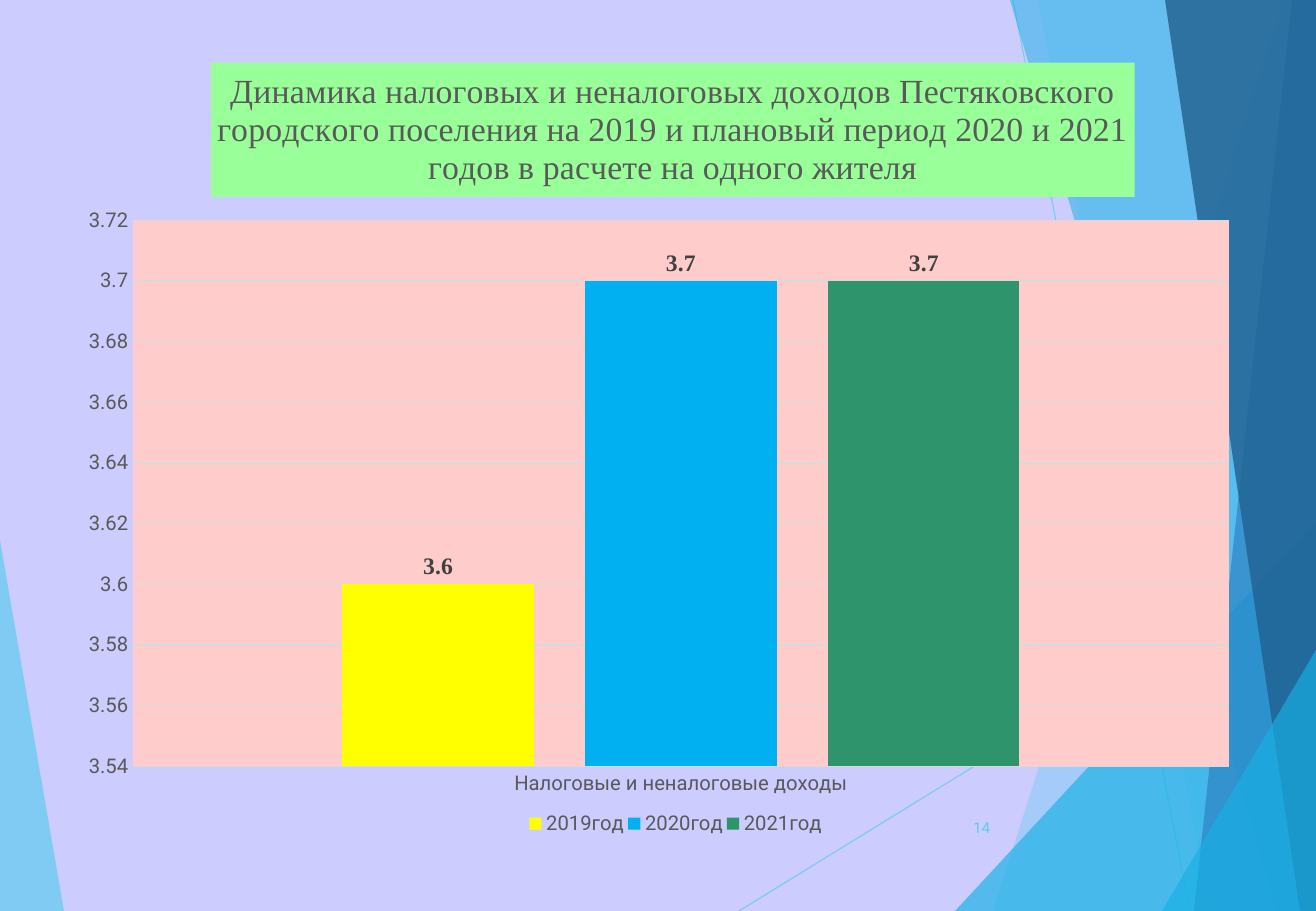
"""Builds the slide on income per resident, a column chart for 2019 to 2021."""
from lxml import etree
from pptx import Presentation
from pptx.chart.data import CategoryChartData
from pptx.dml.color import RGBColor
from pptx.enum.chart import XL_CHART_TYPE as ChartType, XL_LABEL_POSITION as LabelPos
from pptx.enum.chart import XL_LEGEND_POSITION as LegendPos, XL_TICK_MARK as Tick
from pptx.enum.shapes import MSO_CONNECTOR as Connector
from pptx.enum.text import MSO_ANCHOR as Anchor, PP_ALIGN as Align
from pptx.oxml.ns import qn
from pptx.util import Pt

PX = 914400 / 121.5
WIDTH, HEIGHT = 1316, 911
SANS, SERIF = "Roboto", "Times New Roman"
color = RGBColor.from_string


def set_alpha(shape, percent):
    for tint in shape.element.xpath(".//a:srgbClr"):
        etree.SubElement(tint, qn("a:alpha")).set("val", str(percent * 1000))


def place(part, index, **settings):
    for old in part.findall(qn("c:layout")):
        part.remove(old)
    layout = etree.Element(qn("c:layout"))
    manual = etree.SubElement(layout, qn("c:manualLayout"))
    for key, value in settings.items():
        etree.SubElement(manual, qn(f"c:{key}")).set("val", str(value))
    part.insert(index, layout)


deck = Presentation()
deck.slide_width, deck.slide_height = round(WIDTH * PX), round(HEIGHT * PX)
slide = deck.slides.add_slide(deck.slide_layouts[6])
slide.background.fill.solid()
slide.background.fill.fore_color.rgb = color("CCCCFF")

right_edge = [(WIDTH, HEIGHT), (WIDTH, 0)]
left_facet = ([(0, 540), (64, HEIGHT), (0, HEIGHT)], "5FCBEF", 70)
right_facets = [
    ([(1283, 0), (993, HEIGHT), *right_edge], "5FCBEF", 36),
    ([(1038, 0), (1210, HEIGHT), *right_edge], "5FCBEF", 20),
    ([(955, HEIGHT), (WIDTH, 521), (WIDTH, HEIGHT)], "17B0E4", 66),
    ([(1010, 0), (1277, HEIGHT), *right_edge], "17B0E4", 50),
    ([(1292, 0), (1194, HEIGHT), *right_edge], "2E83C3", 70),
    ([(1165, 0), (1300, HEIGHT), *right_edge], "226292", 82),
    ([(1162, HEIGHT), (WIDTH, 650), (WIDTH, HEIGHT)], "17B0E4", 66),
]

for ends in [(739, HEIGHT, WIDTH, 556), (1013, 0, 1190, HEIGHT)]:
    ray = slide.shapes.add_connector(Connector.STRAIGHT, *[round(n * PX) for n in ends])
    ray.line.color.rgb = color("5FCBEF")
    ray.line.width = Pt(0.75)
    set_alpha(ray, 70)
    etree.SubElement(ray.element.spPr, qn("a:effectLst"))

for corners, tint, opacity in [left_facet, *right_facets]:
    outline = slide.shapes.build_freeform(*corners[0], scale=PX)
    outline.add_line_segments(corners[1:], close=True)
    facet = outline.convert_to_shape()
    facet.shadow.inherit = False
    facet.fill.solid()
    facet.fill.fore_color.rgb = color(tint)
    facet.line.fill.background()
    set_alpha(facet, opacity)

years = [("2019год", 3.6, "FFFF00"), ("2020год", 3.7, "00B0F0"), ("2021год", 3.7, "2E946B")]
income = CategoryChartData(number_format="General")
income.categories = ["Налоговые и неналоговые доходы"]
for year, amount, _ in years:
    income.add_series(year, [amount])
frame = [round(n * PX) for n in (44, 56, 1203, 830)]
chart = slide.shapes.add_chart(ChartType.COLUMN_CLUSTERED, *frame, income).chart
chart.font.name, chart.font.size = SANS, Pt(10)
chart.font.color.rgb = color("000000")

chart.has_title = True
heading = chart.chart_title
heading_text = heading.text_frame.paragraphs[0].add_run()
heading_text.text = (
    "Динамика налоговых и неналоговых доходов Пестяковского городского поселения "
    "на 2019 и плановый период 2020 и 2021 годов в расчете на одного жителя"
)
heading_text.font.name, heading_text.font.size = SERIF, Pt(20)
heading_text.font.bold = False
heading_text.font.color.rgb = color("595959")
heading.format.fill.solid()
heading.format.fill.fore_color.rgb = color("99FF99")

chart.has_legend = True
chart.legend.position = LegendPos.BOTTOM
chart.legend.include_in_layout = False

amounts, groups = chart.value_axis, chart.category_axis
amounts.minimum_scale, amounts.maximum_scale, amounts.major_unit = 3.54, 3.72, 0.02
amounts.tick_labels.number_format = "General"
amounts.tick_labels.number_format_is_linked = False
amounts.format.line.fill.background()
for rule in (amounts.major_gridlines.format.line, groups.format.line):
    rule.color.rgb = color("D9D9D9")
    rule.width = Pt(0.75)
for axis in (amounts, groups):
    axis.major_tick_mark = axis.minor_tick_mark = Tick.NONE
for lettering in (amounts.tick_labels.font, groups.tick_labels.font, chart.legend.font):
    lettering.name, lettering.size = SANS, Pt(12)
    lettering.color.rgb = color("595959")

columns = chart.plots[0]
columns.gap_width, columns.overlap = 219, -27
columns.vary_by_categories = False
for column, (_, _, tint) in zip(columns.series, years):
    column.format.fill.solid()
    column.format.fill.fore_color.rgb = color(tint)
    labels = column.data_labels
    labels.show_value = True
    labels.position = LabelPos.OUTSIDE_END
    labels.font.name, labels.font.size, labels.font.bold = SERIF, Pt(14), True
    labels.font.color.rgb = color("404040")

plot_area = chart.element.xpath(".//c:plotArea")[0]
plot_fill = etree.SubElement(etree.SubElement(plot_area, qn("c:spPr")), qn("a:solidFill"))
etree.SubElement(plot_fill, qn("a:srgbClr")).set("val", "FFCCCC")
place(plot_area, 0, layoutTarget="inner", xMode="edge", yMode="edge",
      x=0.074, y=0.198, w=0.911, h=0.658)
place(chart.element.xpath(".//c:title")[0], 1, xMode="edge", yMode="edge", x=0.139, y=0.008)
place(chart.element.xpath(".//c:legend")[0], 1, xMode="edge", yMode="edge",
      x=0.4, y=0.9, w=0.25, h=0.05)

page = slide.shapes.add_textbox(*[round(n * PX) for n in (928, 803, 74, 49)]).text_frame
page.word_wrap = True
page.vertical_anchor = Anchor.MIDDLE
page.paragraphs[0].alignment = Align.RIGHT
number = page.paragraphs[0].add_run()
number.text = "14"
number.font.name, number.font.size = SANS, Pt(9)
number.font.color.rgb = color("5FCBEF")

deck.save("out.pptx")
